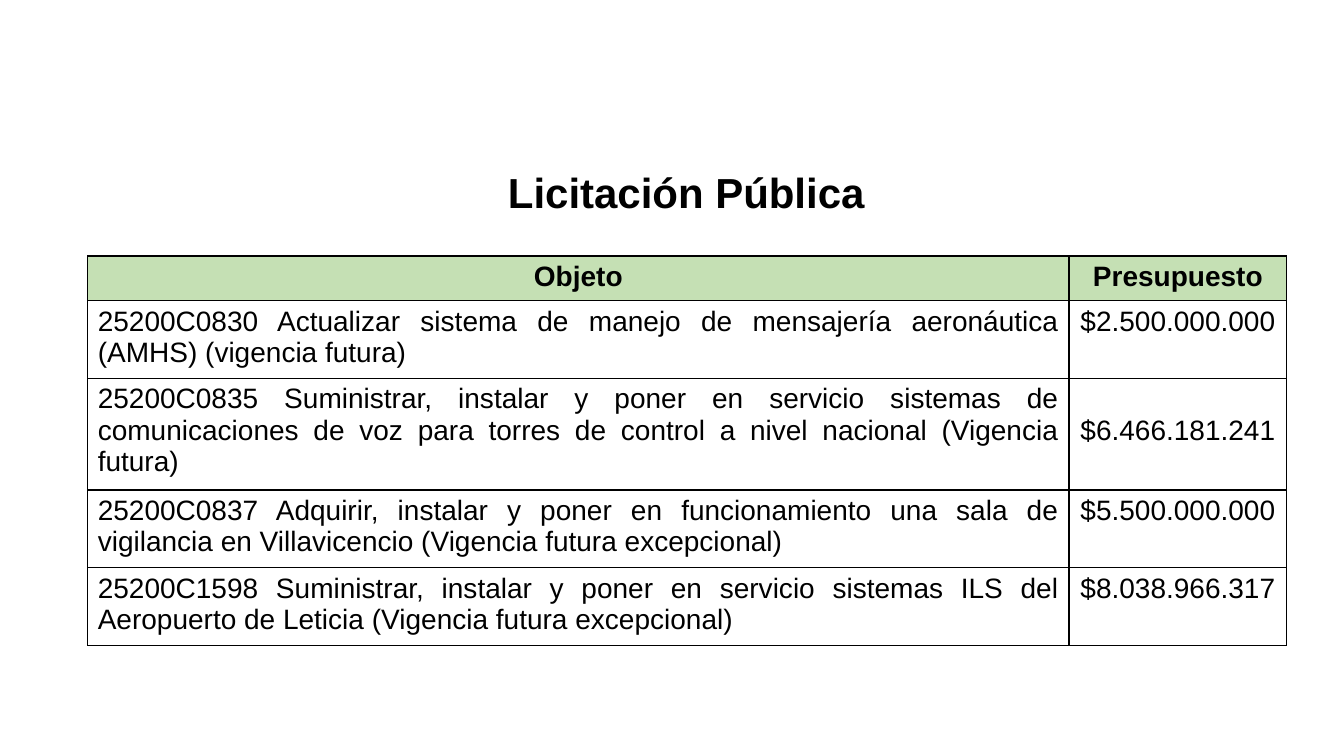
from lxml import etree
from pptx import Presentation
from pptx.dml.color import RGBColor
from pptx.enum.text import MSO_ANCHOR, MSO_AUTO_SIZE, PP_ALIGN
from pptx.oxml.ns import qn
from pptx.util import Cm, Pt

CENTER, JUSTIFY = PP_ALIGN.CENTER, PP_ALIGN.JUSTIFY
TOP, MIDDLE = MSO_ANCHOR.TOP, MSO_ANCHOR.MIDDLE
NO_AUTOFIT = MSO_AUTO_SIZE.NONE
TITLE_ONLY = 5

COLORS = {"text": "000000", "border": "000000", "header": "C5E0B4"}

HEADER = ("Objeto", "Presupuesto")
TENDERS = [
    ("25200C0830 Actualizar sistema de manejo de mensajería aeronáutica "
     "(AMHS) (vigencia futura)", "$2.500.000.000"),
    ("25200C0835 Suministrar, instalar y poner en servicio sistemas de "
     "comunicaciones de voz para torres de control a nivel nacional "
     "(Vigencia futura)", "$6.466.181.241"),
    ("25200C0837 Adquirir, instalar y poner en funcionamiento una sala de "
     "vigilancia en Villavicencio (Vigencia futura excepcional)",
     "$5.500.000.000"),
    ("25200C1598 Suministrar, instalar y poner en servicio sistemas ILS del "
     "Aeropuerto de Leticia (Vigencia futura excepcional)", "$8.038.966.317"),
]
COL_WIDTHS = (24.73, 5.49)
ROW_HEIGHTS = (1.13, 1.96, 2.81, 1.96, 1.96)
LOWERED_ROW, LOWERED_MARGIN = 2, 0.92


class TenderSlide:
    font = "Arial"

    def __init__(self, prs):
        self.s = prs.slides.add_slide(prs.slide_layouts[TITLE_ONLY])

    def set_text(self, tf, text, size, bold, align):
        tf.text = text
        p = tf.paragraphs[0]
        p.alignment = align
        p.font.name = self.font
        p.font.size = Pt(size)
        p.font.bold = bold
        p.font.color.rgb = RGBColor.from_string(COLORS["text"])

    def title(self, text, left, top, width, height):
        sp = self.s.shapes.title
        sp.left, sp.top = Cm(left), Cm(top)
        sp.width, sp.height = Cm(width), Cm(height)
        tf = sp.text_frame
        tf.word_wrap = True
        tf.auto_size = NO_AUTOFIT
        tf.vertical_anchor = MIDDLE
        self.set_text(tf, text, 30, True, CENTER)

    def borders(self, cell):
        """Draw a 1 pt line on all four sides; call before filling the cell."""
        tc_pr = cell._tc.get_or_add_tcPr()
        for side in ("a:lnL", "a:lnR", "a:lnT", "a:lnB"):
            ln = etree.SubElement(tc_pr, qn(side), w=str(Pt(1)))
            fill = etree.SubElement(ln, qn("a:solidFill"))
            etree.SubElement(fill, qn("a:srgbClr"), val=COLORS["border"])

    def table(self, rows, left, top):
        table = self.s.shapes.add_table(
            len(rows), len(COL_WIDTHS), Cm(left), Cm(top),
            Cm(sum(COL_WIDTHS)), Cm(sum(ROW_HEIGHTS))).table
        table.horz_banding = False
        for column, width in zip(table.columns, COL_WIDTHS):
            column.width = Cm(width)
        for i, (row, values) in enumerate(zip(table.rows, rows)):
            row.height = Cm(ROW_HEIGHTS[i])
            for j, (cell, text) in enumerate(zip(row.cells, values)):
                is_header = i == 0
                is_object = j == 0 and not is_header
                cell.vertical_anchor = TOP
                self.set_text(cell.text_frame, text, 20, is_header,
                              JUSTIFY if is_object else CENTER)
                self.borders(cell)
                if is_header:
                    cell.fill.solid()
                    cell.fill.fore_color.rgb = RGBColor.from_string(COLORS["header"])
                else:
                    cell.fill.background()
        table.cell(LOWERED_ROW, 1).margin_top = Cm(LOWERED_MARGIN)


def main():
    prs = Presentation()
    prs.slide_width, prs.slide_height = Cm(33.87), Cm(19.05)
    slide = TenderSlide(prs)
    slide.title("Licitación Pública", 3.71, 4.06, 27.18, 1.55)
    slide.table([HEADER, *TENDERS], 2.21, 6.45)
    prs.save("out.pptx")


if __name__ == "__main__":
    main()
